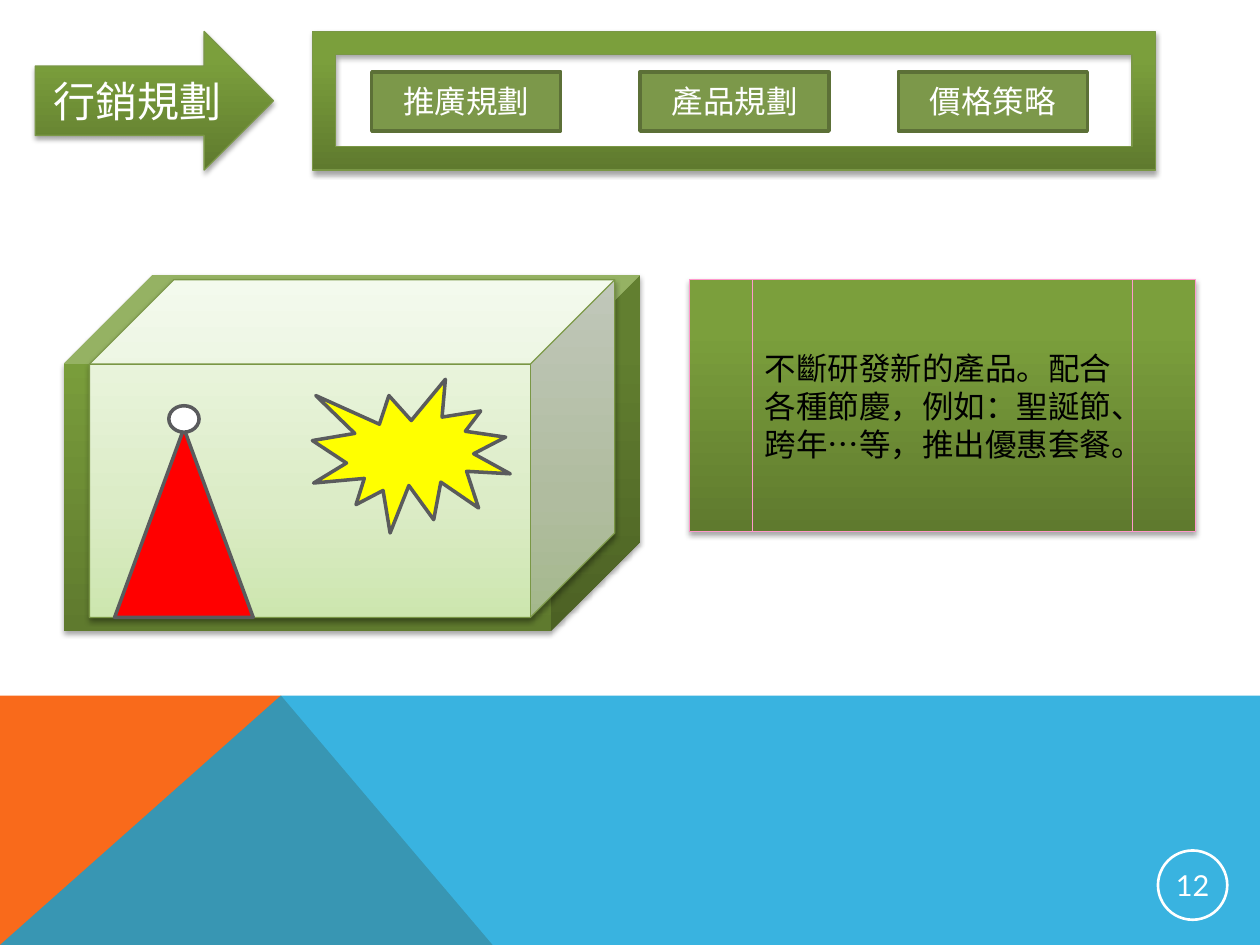
import pptx
import pptx.util
import pptx.dml.color
import pptx.enum.shapes
import pptx.enum.text
import pptx.oxml.ns
from lxml import etree

Inches, Pt = pptx.util.Inches, pptx.util.Pt
KIND = pptx.enum.shapes.MSO_SHAPE
ALIGN = pptx.enum.text.PP_ALIGN
MIDDLE = pptx.enum.text.MSO_ANCHOR.MIDDLE
qn = pptx.oxml.ns.qn

# Content and formats
WIDTH, HEIGHT = 10, 7.5
GREEN = [(0, "5F7A2E"), (80, "7B9F3C"), (100, "7CA13B")]
PALE = [(0, "CDE6AF"), (35, "DCECC7"), (100, "F1F9E9")]
GREEN_STYLE = {"fill": GREEN, "line": ("7A9746", 0.75), "shadow": (35, 1.8)}
BUTTON_STYLE = {"fill": "7C984A", "line": ("5C7037", 2)}
DRAWING_LINE = ("5A5B5D", 2)

BAND_TOP, BAND_PEAK = 5.52, 2.23
BANDS = [
    ("F96A1B", 100, [(0, HEIGHT), (0, BAND_TOP), (BAND_PEAK, BAND_TOP), (3.91, HEIGHT)]),
    ("08A1D9", 80, [(0, HEIGHT), (BAND_PEAK, BAND_TOP), (WIDTH, BAND_TOP), (WIDTH, HEIGHT)]),
]
PLANS = [("推廣規劃", 2.95), ("產品規劃", 5.08), ("價格策略", 7.13)]
HEADING = "行銷規劃"
DETAIL = "不斷研發新的產品。配合各種節慶，例如：聖誕節、跨年…等，推出優惠套餐。"
PAGE_NUMBER = "12"


def rgb(code):
    return pptx.dml.color.RGBColor.from_string(code)


def add_color(parent, code, alpha=100):
    color = etree.SubElement(parent, qn("a:srgbClr"), val=code)
    if alpha < 100:
        etree.SubElement(color, qn("a:alpha"), val=str(alpha * 1000))


def set_fill(shape, fill):
    if fill is None:
        shape.fill.background()
    elif isinstance(fill, str):
        shape.fill.solid()
        shape.fill.fore_color.rgb = rgb(fill)
    else:
        shape.fill.gradient()
        shape.fill.gradient_angle = 90
        stops = shape.element.spPr.find(".//" + qn("a:gsLst"))
        for stop in list(stops):
            stops.remove(stop)
        for position, code in fill:
            add_color(etree.SubElement(stops, qn("a:gs"), pos=str(position * 1000)), code)


def style(shape, fill=None, line=None, shadow=None):
    set_fill(shape, fill)
    if line:
        shape.line.color.rgb = rgb(line[0])
        shape.line.width = Pt(line[1])
    else:
        shape.line.fill.background()
    shape.shadow.inherit = False
    if shadow:
        alpha, distance = shadow
        effects = shape.element.spPr.find(qn("a:effectLst"))
        outer = etree.SubElement(effects, qn("a:outerShdw"), blurRad=str(Pt(3.1)),
                                 dist=str(Pt(distance)), dir="5400000", rotWithShape="0")
        add_color(outer, "000000", alpha)


def add_shape(page, kind, place, **look):
    shape = page.shapes.add_shape(kind, *map(Inches, place))
    style(shape, **look)
    return shape


def write(shape, text, size, color="FFFFFF", font="Lato", align=ALIGN.CENTER, inset=None):
    frame = shape.text_frame
    settings = {"word_wrap": True, "vertical_anchor": MIDDLE}
    if inset is not None:
        for side in ("left", "top", "right", "bottom"):
            settings["margin_" + side] = Inches(inset)
    for name, value in settings.items():
        setattr(frame, name, value)
    para = frame.paragraphs[0]
    para.alignment = align
    span = para.add_run()
    span.text = text
    for name, value in {"size": Pt(size), "name": font}.items():
        setattr(span.font, name, value)
    span.font.color.rgb = rgb(color)


def add_band(page, code, alpha, points):
    builder = page.shapes.build_freeform(*map(Inches, points[0]), scale=1.0)
    builder.add_line_segments([(Inches(x), Inches(y)) for x, y in points[1:]], close=True)
    band = builder.convert_to_shape()
    style(band, code)
    if alpha < 100:
        color = band.element.spPr.find(qn("a:solidFill"))[0]
        etree.SubElement(color, qn("a:alpha"), val=str(alpha * 1000))


def main():
    deck = pptx.Presentation()
    deck.slide_width, deck.slide_height = Inches(WIDTH), Inches(HEIGHT)
    page = deck.slides.add_slide(deck.slide_layouts[6])

    # Coloured bands and page number
    for band in BANDS:
        add_band(page, *band)
    badge = add_shape(page, KIND.OVAL, (9.19, 6.75, 0.55, 0.55), line=("FFFFFF", 1.5))
    write(badge, PAGE_NUMBER, 16.5, inset=0.01)

    # Heading arrow and framed plans
    frame = add_shape(page, KIND.FRAME, (2.48, 0.25, 6.69, 1.1), **GREEN_STYLE)
    frame.adjustments[0] = 0.168
    for label, left in PLANS:
        write(add_shape(page, KIND.RECTANGLE, (left, 0.57, 1.5, 0.47), **BUTTON_STYLE), label, 18)
    arrow = add_shape(page, KIND.RIGHT_ARROW, (0.28, 0.25, 1.89, 1.1), **GREEN_STYLE)
    write(arrow, HEADING, 24, font="Noto Sans CJK JP")

    # Gift box: outer and inner cube
    add_shape(page, KIND.CUBE, (0.51, 2.18, 4.57, 2.83), fill=GREEN, shadow=(35, 1.8))
    add_shape(page, KIND.CUBE, (0.71, 2.22, 4.17, 2.68),
              fill=PALE, line=("7A9746", 0.75), shadow=(38, 1.6))

    # Detail panel
    panel = add_shape(page, KIND.FLOWCHART_PREDEFINED_PROCESS, (5.47, 2.22, 4.02, 2),
                      **{**GREEN_STYLE, "line": ("FF99CC", 0.75)})
    write(panel, DETAIL, 18, "000000", align=ALIGN.LEFT)

    # Party hat and burst on the box
    for kind, place, fill in [
        (KIND.FLOWCHART_EXTRACT, (0.91, 3.4, 1.1, 1.5), "FF0000"),
        (KIND.FLOWCHART_CONNECTOR, (1.34, 3.22, 0.24, 0.21), "FFFFFF"),
        (KIND.EXPLOSION1, (2.48, 3.01, 1.57, 1.22), "FFFF00"),
    ]:
        add_shape(page, kind, place, fill=fill, line=DRAWING_LINE)

    deck.save("out.pptx")


if __name__ == "__main__":
    main()
